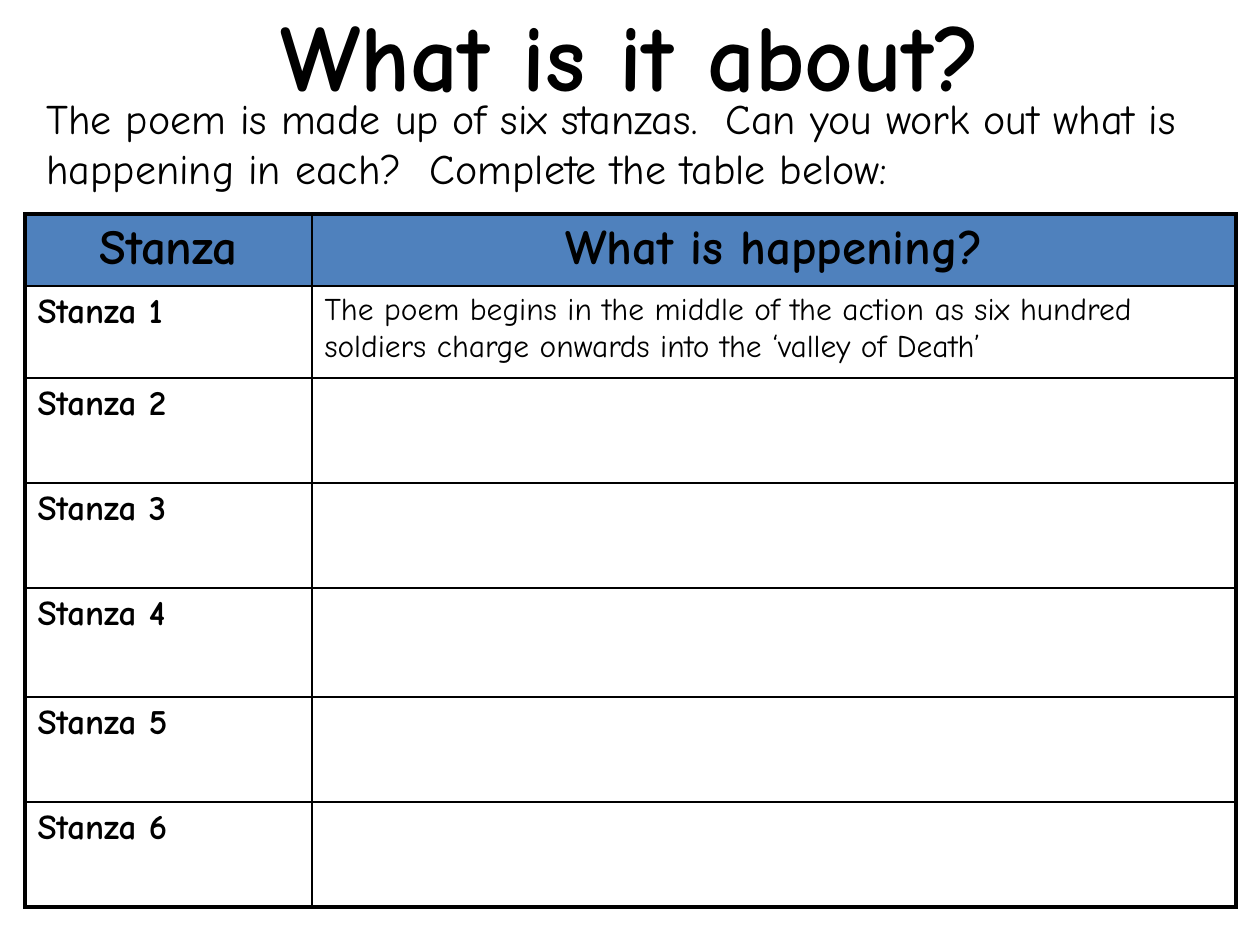
import pptx
import pptx.dml.color
import pptx.enum.text
import pptx.oxml
import pptx.oxml.ns
import pptx.util

PX = 914400 // 126
FONT = "Comic Neue"
BLACK, HEADER_BLUE = "000000", "4F81BD"
THIN, THICK = 1, 2.25

TITLE = "What is it about?"
INTRO = ("The poem is made up of six stanzas.  Can you work out what is "
         "happening in each?  Complete the table below:")
HEADINGS = ("Stanza", "What is happening?")
SUMMARIES = (
    "The poem begins in the middle of the action as six hundred soldiers "
    "charge onwards into the ‘valley of Death’",
    "", "", "", "", "",
)
ROWS = [HEADINGS] + [(f"Stanza {n}", s) for n, s in enumerate(SUMMARIES, 1)]

TITLE_BOX = (95, -14, 1071, 135)
INTRO_BOX = (34, 86, 1201, 115)
TABLE_LEFT, TABLE_TOP = 25, 214
COLUMN_WIDTHS = (287, 924)
ROW_HEIGHTS = (72, 92, 105, 105, 109, 105, 105)

LEFT = pptx.enum.text.PP_ALIGN.LEFT
CENTER = pptx.enum.text.PP_ALIGN.CENTER


def emu(*lengths):
    return [pptx.util.Emu(length * PX) for length in lengths]


def rgb(colour):
    return pptx.dml.color.RGBColor.from_string(colour)


def write(frame, text, size, bold=False, align=LEFT, colour=BLACK):
    frame.word_wrap = True
    paragraph = frame.paragraphs[0]
    paragraph.alignment = align
    run = paragraph.add_run()
    run.text = text
    run.font.name = FONT
    run.font.size = pptx.util.Pt(size)
    run.font.bold = bold
    run.font.color.rgb = rgb(colour)


def set_borders(cell, widths):
    """Draw the left, right, top and bottom cell lines, widths in points."""
    properties = cell._tc.get_or_add_tcPr()
    for position, (side, width) in enumerate(zip("LRTB", widths)):
        line = pptx.oxml.parse_xml(
            f'<a:ln{side} {pptx.oxml.ns.nsdecls("a")} w="{pptx.util.Pt(width)}">'
            f'<a:solidFill><a:srgbClr val="{BLACK}"/></a:solidFill></a:ln{side}>')
        properties.insert(position, line)


def add_stanza_table(slide):
    last_row, last_column = len(ROWS) - 1, len(HEADINGS) - 1
    table = slide.shapes.add_table(
        len(ROWS), len(HEADINGS),
        *emu(TABLE_LEFT, TABLE_TOP, sum(COLUMN_WIDTHS), sum(ROW_HEIGHTS))).table
    for column, width in zip(table.columns, emu(*COLUMN_WIDTHS)):
        column.width = width
    for row, height in zip(table.rows, emu(*ROW_HEIGHTS)):
        row.height = height

    for r, texts in enumerate(ROWS):
        for c, text in enumerate(texts):
            cell = table.cell(r, c)
            if r == 0:
                cell.fill.solid()
                cell.fill.fore_color.rgb = rgb(HEADER_BLUE)
                style = dict(size=28, bold=True, align=CENTER)
            else:
                cell.fill.background()
                style = dict(size=20, bold=True) if c == 0 else dict(size=18)
            if text:
                write(cell.text_frame, text, **style)
            outer_edges = (c == 0, c == last_column, r == 0, r == last_row)
            set_borders(cell, [THICK if outer else THIN for outer in outer_edges])


def main():
    deck = pptx.Presentation()
    deck.slide_width, deck.slide_height = emu(1260, 945)
    slide = deck.slides.add_slide(deck.slide_layouts[5])

    title = slide.shapes.title
    title.left, title.top, title.width, title.height = emu(*TITLE_BOX)
    title.text_frame.auto_size = pptx.enum.text.MSO_AUTO_SIZE.NONE
    title.text_frame.vertical_anchor = pptx.enum.text.MSO_ANCHOR.MIDDLE
    write(title.text_frame, TITLE, size=54, bold=True, align=CENTER)

    add_stanza_table(slide)

    intro = slide.shapes.add_textbox(*emu(*INTRO_BOX))
    write(intro.text_frame, INTRO, size=24)

    deck.save("out.pptx")


if __name__ == "__main__":
    main()
